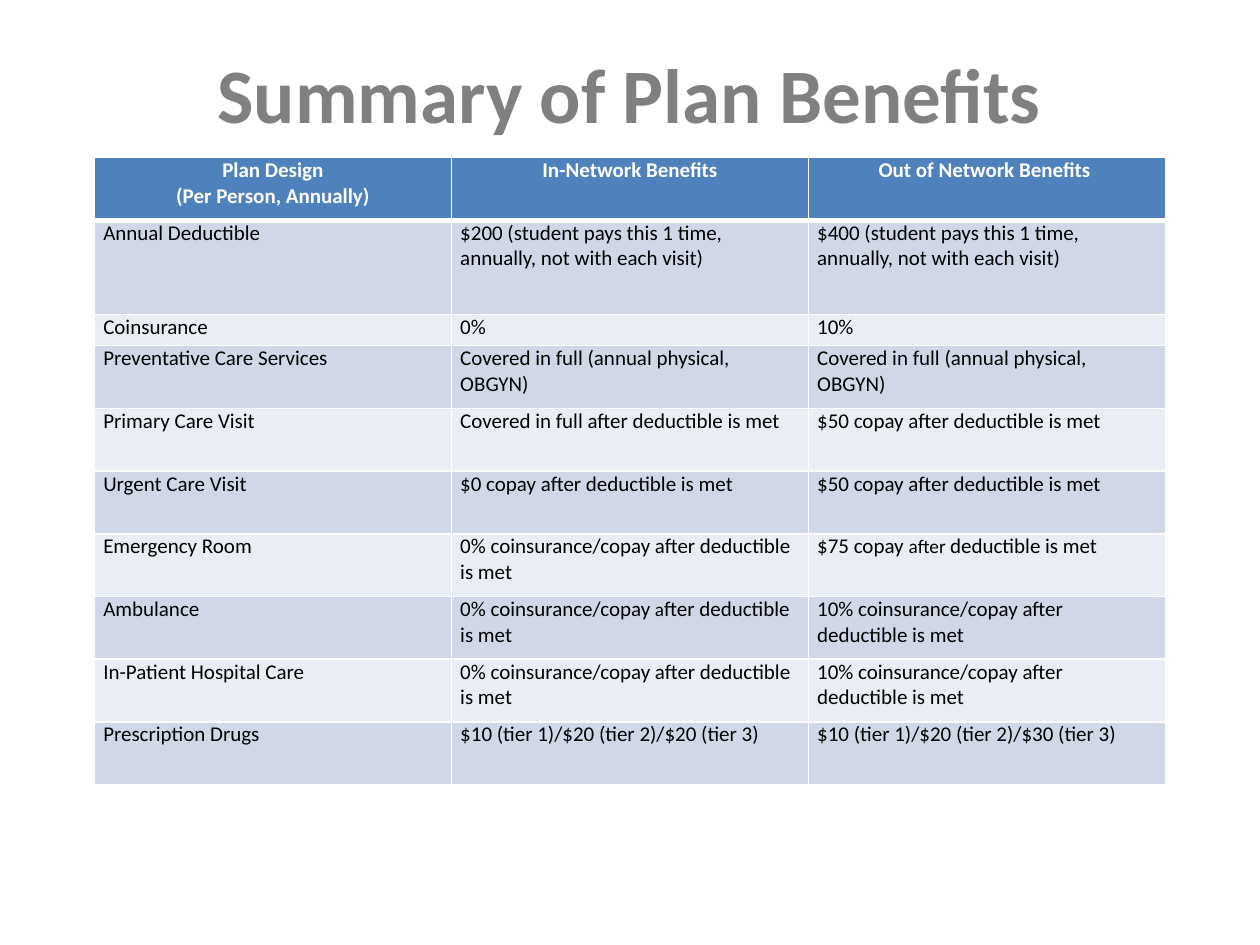
from lxml import etree
from pptx import Presentation
from pptx.dml.color import RGBColor
from pptx.enum import text as t
from pptx.oxml import ns
from pptx.util import Inches, Pt

WHITE = RGBColor(0xFF, 0xFF, 0xFF)
BLACK = RGBColor(0, 0, 0)
GRAY = RGBColor(0x80, 0x80, 0x80)
BLUE = RGBColor(0x4F, 0x81, 0xBD)
BANDS = RGBColor(0xD0, 0xD8, 0xE8), RGBColor(0xE9, 0xED, 0xF4)

# Text between bars is set one point smaller.
ROWS = [
    ("Plan Design\n(Per Person, Annually)", "In-Network Benefits",
     "Out of Network Benefits "),
    ("Annual Deductible",
     "$200 (student pays this 1 time, annually, not with each visit)",
     "$400 (student pays this 1 time, annually, not with each visit)"),
    ("Coinsurance", "0%", "10%"),
    ("Preventative Care Services", "Covered in full (annual physical, OBGYN)",
     "Covered in full (annual physical, OBGYN)"),
    ("Primary Care Visit", "Covered in full after deductible is met",
     "$50 copay after deductible is met"),
    ("Urgent Care Visit", "$0 copay after deductible is met",
     "$50 copay after deductible is met"),
    ("Emergency Room", "0% coinsurance/copay| |after deductible is met",
     "$75 copay |after |deductible is met"),
    ("Ambulance", "0% coinsurance/copay| a|fter deductible is met",
     "10% coinsurance/copay| |after deductible is met"),
    ("In-Patient Hospital Care",
     "0% coinsurance/copay| |after deductible is met",
     "10% coinsurance/copay after deductible is met"),
    ("Prescription Drugs", "$10 (tier 1)/$20 (tier 2)/$20 (tier 3)",
     "$10 (tier 1)/$20 (tier 2)/$30 (tier 3)"),
]
UNITS = [2, 3, 1] + [2] * 7  # row heights in shares of the table


def write(frame, words, size=12, color=BLACK, bold=False, align=t.PP_ALIGN.LEFT):
    """Fill a frame: newlines part paragraphs, bars part normal and small runs."""
    for i, line in enumerate(words.split("\n")):
        para = frame.add_paragraph() if i else frame.paragraphs[0]
        para.alignment = align
        for j, part in enumerate(line.split("|")):
            run = para.add_run()
            run.text = part
            font = run.font
            font.name, font.bold = "Calibri", bold
            font.size = Pt(size - j % 2)
            font.color.rgb = color


def edge(cell, side, width):
    """Draw one white cell border."""
    line = etree.SubElement(cell._tc.get_or_add_tcPr(), ns.qn("a:ln" + side),
                            w=str(Pt(width)))
    fill = etree.SubElement(line, ns.qn("a:solidFill"))
    etree.SubElement(fill, ns.qn("a:srgbClr"), val=str(WHITE))


class Deck:
    def __init__(self):
        self.prs = Presentation()
        self.prs.slide_width, self.prs.slide_height = Inches(10), Inches(7.5)
        self.slide = self.prs.slides.add_slide(self.prs.slide_layouts[6])

    def title(self, words, *box):
        frame = self.slide.shapes.add_textbox(*map(Inches, box)).text_frame
        frame.word_wrap = True
        frame.vertical_anchor = t.MSO_ANCHOR.MIDDLE
        write(frame, words, size=44, color=GRAY, bold=True,
              align=t.PP_ALIGN.CENTER)

    def table(self, rows, units, left, top, width, height):
        box = map(Inches, (left, top, width, height))
        grid = self.slide.shapes.add_table(len(rows), len(rows[0]), *box).table
        for r, (row, unit) in enumerate(zip(rows, units)):
            grid.rows[r].height = Inches(height * unit / sum(units))
            for c, words in enumerate(row):
                self.cell(grid.cell(r, c), words, r)

    def cell(self, cell, words, row):
        head = row == 0
        cell.margin_left = cell.margin_right = Inches(0.07)
        cell.margin_top = cell.margin_bottom = 0
        for side in "LRTB":
            thick = (head and side == "B") or (row == 1 and side == "T")
            edge(cell, side, 3 if thick else 1)
        cell.fill.solid()
        cell.fill.fore_color.rgb = BLUE if head else BANDS[(row - 1) % 2]
        if head:
            write(cell.text_frame, words, color=WHITE, bold=True,
                  align=t.PP_ALIGN.CENTER)
        else:
            write(cell.text_frame, words)


def main():
    deck = Deck()
    deck.title("Summary of Plan Benefits", 0.5, 0, 9, 1.47)
    deck.table(ROWS, UNITS, 0.75, 1.25, 8.5, 4.98)
    deck.prs.save("out.pptx")


if __name__ == "__main__":
    main()
